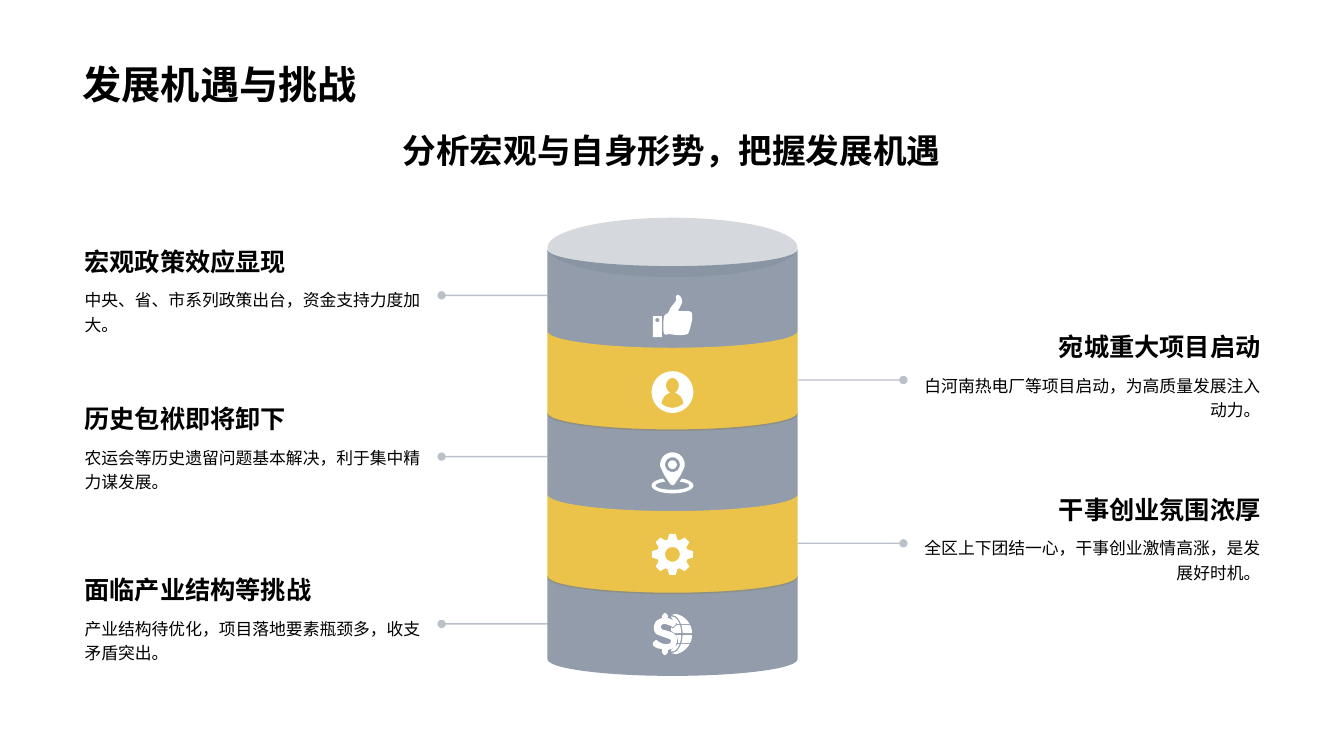
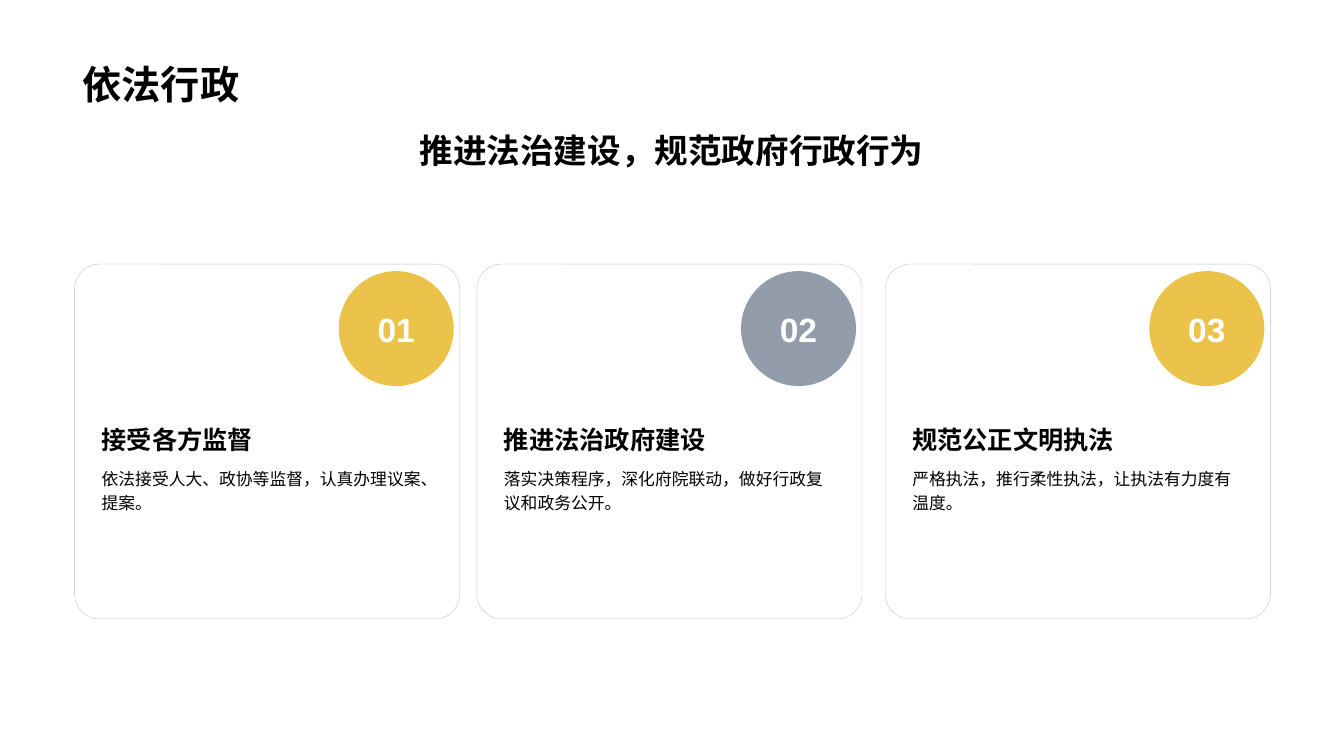
from dataclasses import dataclass
from itertools import cycle
from math import cos, radians, sin, sqrt

from lxml import etree
from pptx import Presentation
from pptx import util as u
from pptx.dml.color import RGBColor
from pptx.enum import shapes, text
from pptx.oxml.ns import qn

Inches = u.Inches
SHAPE = shapes.MSO_SHAPE
ALIGN = text.PP_ALIGN
ANCHOR = text.MSO_ANCHOR


@dataclass(frozen=True)
class Theme:
    font: str = "Arial"
    ink: str = "000000"
    white: str = "FFFFFF"
    # Paints are a colour and its opacity in percent.
    slate: tuple = ("778495", 80)
    lid: tuple = ("778495", 30)
    rule: tuple = ("778495", 50)
    gold: tuple = ("EBC34A", 100)
    icon: tuple = ("FFFFFF", 100)
    title: int = 28
    subtitle: int = 24
    heading: int = 18
    body: int = 12


THEME = Theme()
LEFT, WIDTH = 0.72, 11.88

CHANCES = {
    "title": "发展机遇与挑战",
    "subtitle": "分析宏观与自身形势，把握发展机遇",
    # icon, icon centre, side, connector height, heading top, heading, body
    "bands": [
        ("thumb", 3.13, "left", 2.93, 2.42, "宏观政策效应显现",
         "中央、省、市系列政策出台，资金支持力度加大。"),
        ("person", 3.89, "right", 3.77, 3.27, "宛城重大项目启动",
         "白河南热电厂等项目启动，为高质量发展注入动力。"),
        ("pin", 4.69, "left", 4.53, 3.98, "历史包袱即将卸下",
         "农运会等历史遗留问题基本解决，利于集中精力谋发展。"),
        ("gear", 5.5, "right", 5.39, 4.88, "干事创业氛围浓厚",
         "全区上下团结一心，干事创业激情高涨，是发展好时机。"),
        ("money", 6.29, "left", 6.19, 5.68, "面临产业结构等挑战",
         "产业结构待优化，项目落地要素瓶颈多，收支矛盾突出。"),
    ],
}
LAW = {
    "title": "依法行政",
    "subtitle": "推进法治建设，规范政府行政行为",
    # card left, heading, body
    "cards": [
        (0.74, "接受各方监督", "依法接受人大、政协等监督，认真办理议案、提案。"),
        (4.73, "推进法治政府建设", "落实决策程序，深化府院联动，做好行政复议和政务公开。"),
        (8.78, "规范公正文明执法", "严格执法，推行柔性执法，让执法有力度有温度。"),
    ],
}

# Icon outlines, in hundredths of an inch from the icon centre.
HAND = [(5.5, -20.5), (8.5, -18), (9.5, -13), (7.5, -8.5), (6, -4.5), (12.5, -4.5),
        (18.5, -3.5), (19.5, 1.5), (19.5, 4.5), (18.5, 8.5), (17.5, 12.5), (16.5, 15.5),
        (14.5, 18.5), (6.5, 19.5), (-2.5, 18.5), (-8.5, 17.5), (-8.5, 1.5),
        (-4.5, -2.5), (-2, -7.5), (1.5, -12), (3.5, -15), (3.5, -19)]
CUFF = [(-19.5, 0.5), (-10.5, 0.5), (-10.5, 21.5), (-19.5, 21.5)]
SHOULDERS = [(7.5, 3.5), (10, 7.5), (11, 11.5), (6, 14.5), (0, 15.8),
             (-6, 14.5), (-11, 11.5), (-10, 7.5), (-7.5, 3.5)]
PIN_TIP = [(8, 2.5), (2, 11.5), (0, 12.5), (-2, 11.5), (-8, 2.5)]
DOLLAR = [(-4.5, -3), (-10, -4.5), (-11.5, -7), (-10.5, -9.2), (-7.5, -10), (-1.5, -8),
          (0.5, -7), (3.5, -10), (2.5, -13), (-4.5, -16), (-4.5, -18), (-7.5, -21),
          (-10.5, -18), (-10.5, -16), (-16, -13), (-18.5, -7), (-16.5, -0.5), (-8.5, 3),
          (-3, 5), (-1.5, 7), (-2.8, 9.3), (-6.5, 10), (-11, 9), (-14.5, 7), (-16.5, 6),
          (-19.5, 9), (-18.5, 12), (-14.5, 14.2), (-10.5, 15), (-10.5, 18), (-7.5, 21),
          (-4.5, 18), (-4.5, 16), (2, 13), (4.5, 6), (2, 0)]
# Globe rows: top, bottom, inner edge from bottom to top
GLOBE_ROWS = [
    (-20, -10, [(5, -10), (-1.5, -16.5)]),
    (-9, -1, [(2.5, -1), (-1.5, -3), (-1.5, -6.5), (0.5, -5.5), (4.5, -9)]),
    (1, 9, [(5.5, 9), (5.5, 6), (3.5, 1)]),
    (10, 20, [(-1.5, 16), (5.5, 10)]),
]


def arc(cx, cy, rx, ry, start=0, end=360, steps=36):
    angles = [radians(start + (end - start) * i / steps) for i in range(steps + 1)]
    return [(cx + rx * cos(a), cy + ry * sin(a)) for a in angles]


def smooth(points, steps=5):
    """Closed Catmull-Rom curve through the points."""
    curve = []
    for i in range(len(points)):
        p0, p1, p2, p3 = (points[(i + k) % len(points)] for k in (-1, 0, 1, 2))
        for t in (step / steps for step in range(steps)):
            curve.append(tuple(
                b + t * ((c - a) + t * ((2 * a - 5 * b + 4 * c - d)
                                        + t * (3 * b - a - 3 * c + d))) / 2
                for a, b, c, d in zip(p0, p1, p2, p3)))
    return curve


def meridian(rx, ry, top, bottom, steps=8):
    """Right half of the globe ellipse between two heights."""
    top, bottom = max(top, -ry), min(bottom, ry)
    heights = [top + (bottom - top) * i / steps for i in range(steps + 1)]
    return [(rx * sqrt(max(0, 1 - (y / ry) ** 2)) - 1, y) for y in heights]


def gear_rim():
    corners = [(15.5, -18), (20.6, -9), (20.6, 9), (15.5, 18)]
    return [(r * cos(radians(tooth + a)), r * sin(radians(tooth + a)))
            for tooth in range(0, 360, 45) for r, a in corners]


def globe():
    cells = []
    for top, bottom, inner_edge in GLOBE_ROWS:
        cells.append(meridian(20.5, 20.5, top, bottom) + meridian(11, 19, top, bottom)[::-1])
        cells.append(meridian(9.7, 17.5, top, bottom) + inner_edge)
    return cells


ICONS = {
    "thumb": [smooth(HAND), CUFF, arc(-15, 4.5, 2, 2)],
    "person": [arc(0, 0, 20.7, 20.7), arc(0, -6.5, 6.3, 7.5, 115, 425) + SHOULDERS],
    "pin": [arc(0, 12.7, 20.7, 7.8, -63, 243) + arc(0, 12.7, 16.8, 4.2, 245, -65),
            arc(0, -8, 12.2, 12.2, 170, 370) + PIN_TIP,
            arc(0, -8, 7.3, 7.3), arc(0, -8, 4.3, 4.3)],
    "gear": [gear_rim(), arc(0, 0, 7.3, 7.3)],
    "money": [smooth(DOLLAR)] + globe(),
}


def paint(fill, parent, colour, opacity):
    fill.solid()
    fill.fore_color.rgb = RGBColor.from_string(colour)
    if opacity < 100:
        node = parent.find(qn("a:solidFill")).find(qn("a:srgbClr"))
        etree.SubElement(node, qn("a:alpha"), val=str(opacity * 1000))


def draw_line(item, width):
    item.line.width = u.Pt(width)
    item.line.fill.solid()
    outline = item.element.spPr.find(qn("a:ln"))
    paint(item.line.fill, outline, *THEME.rule)
    return outline


def fill_only(shape, colours):
    shape.shadow.inherit = False
    paint(shape.fill, shape.element.spPr, *colours)
    shape.line.fill.background()


def add_shape(page, preset, left, top, width, height, colours):
    shape = page.shapes.add_shape(preset, *map(Inches, (left, top, width, height)))
    fill_only(shape, colours)
    return shape


def write(frame, words, size, bold=False, align=ALIGN.LEFT, anchor=ANCHOR.TOP,
          spacing=None, colour=THEME.ink, wrap=True):
    frame.word_wrap = wrap
    frame.vertical_anchor = anchor
    para = frame.paragraphs[0]
    para.text = words
    para.alignment = align
    if spacing:
        para.line_spacing = spacing
    para.font.name = THEME.font
    para.font.size = u.Pt(size)
    para.font.bold = bold
    para.font.color.rgb = RGBColor.from_string(colour)


def add_text(page, left, top, width, height, words, size, **style):
    box = page.shapes.add_textbox(*map(Inches, (left, top, width, height)))
    write(box.text_frame, words, size, **style)


def add_heading_and_body(page, left, top, width, heights, heading, body, align=ALIGN.LEFT):
    add_text(page, left, top, width, heights[0], heading, THEME.heading,
             bold=True, align=align, anchor=ANCHOR.BOTTOM)
    add_text(page, left, top + heights[0], width, heights[1], body, THEME.body,
             align=align, spacing=1.2)


def add_page(deck, content):
    page = deck.slides.add_slide(deck.slide_layouts[5])
    title = page.shapes.title
    title.left, title.top, title.width, title.height = map(Inches, (LEFT, 0.14, WIDTH, 0.98))
    write(title.text_frame, content["title"], THEME.title, bold=True, anchor=ANCHOR.BOTTOM)
    add_text(page, LEFT, 1.24, WIDTH, 0.75, content["subtitle"], THEME.subtitle,
             bold=True, align=ALIGN.CENTER)
    return page


def add_pointer(page, start, end, y):
    pointer = page.shapes.add_connector(
        shapes.MSO_CONNECTOR.STRAIGHT, *map(Inches, (start, y, end, y)))
    outline = draw_line(pointer, 1)
    etree.SubElement(outline, qn("a:tailEnd"), type="oval")
    etree.SubElement(pointer.element.spPr, qn("a:effectLst"))


def add_icon(page, name, x, y):
    builder = None
    for outline in ICONS[name]:
        points = [(Inches(px / 100), Inches(py / 100)) for px, py in outline]
        if builder is None:
            builder = page.shapes.build_freeform(*points[0], scale=1.0)
        else:
            builder.move_to(*points[0])
        builder.add_line_segments(points[1:], close=True)
    fill_only(builder.convert_to_shape(Inches(x), Inches(y)), THEME.icon)


def build_chances(deck):
    page = add_page(deck, CHANCES)
    centre, drum_width, band_height = 6.67, 2.48, 0.99
    first_band, band_step, reach = 2.97, 0.81, 1.05
    drum_left, drum_right = centre - drum_width / 2, centre + drum_width / 2
    sides = {"left": (drum_left, drum_left - reach, 0.74, ALIGN.LEFT),
             "right": (drum_right, drum_right + reach, 8.95, ALIGN.RIGHT)}

    add_shape(page, SHAPE.OVAL, drum_left, 2.16, drum_width, 0.59, THEME.lid)
    for _, _, side, pointer_y, *_ in CHANCES["bands"]:
        add_pointer(page, *sides[side][:2], pointer_y)
    colours = cycle((THEME.slate, THEME.gold))
    for i, (icon, icon_y, side, _, top, heading, body) in enumerate(CHANCES["bands"]):
        middle = first_band + i * band_step
        # The preset stands upright and is turned on its side.
        band = add_shape(page, SHAPE.FLOWCHART_STORED_DATA, centre - band_height / 2,
                         middle - drum_width / 2, band_height, drum_width, next(colours))
        band.rotation = 270
        add_icon(page, icon, centre, icon_y)
        text_left, align = sides[side][2:]
        add_heading_and_body(page, text_left, top, 3.65, (0.37, 0.66), heading, body, align)


def build_law(deck):
    page = add_page(deck, LAW)
    colours = cycle((THEME.gold, THEME.slate))
    for number, (left, heading, body) in enumerate(LAW["cards"], 1):
        card = page.shapes.add_shape(
            SHAPE.ROUNDED_RECTANGLE, *map(Inches, (left, 2.62, 3.82, 3.52)))
        card.adjustments[0] = 0.07
        card.shadow.inherit = False
        card.fill.background()
        draw_line(card, 0.25)
        add_heading_and_body(page, left + 0.17, 3.83, 3.48, (0.73, 1.46), heading, body)
        badge = add_shape(page, SHAPE.OVAL, left + 2.62, 2.69, 1.14, 1.14, next(colours))
        write(badge.text_frame, f"{number:02}", THEME.subtitle, bold=True,
              align=ALIGN.CENTER, anchor=ANCHOR.MIDDLE, colour=THEME.white, wrap=False)


def main():
    deck = Presentation()
    deck.slide_width, deck.slide_height = Inches(13.33), Inches(7.5)
    build_chances(deck)
    build_law(deck)
    deck.save("out.pptx")


if __name__ == "__main__":
    main()
